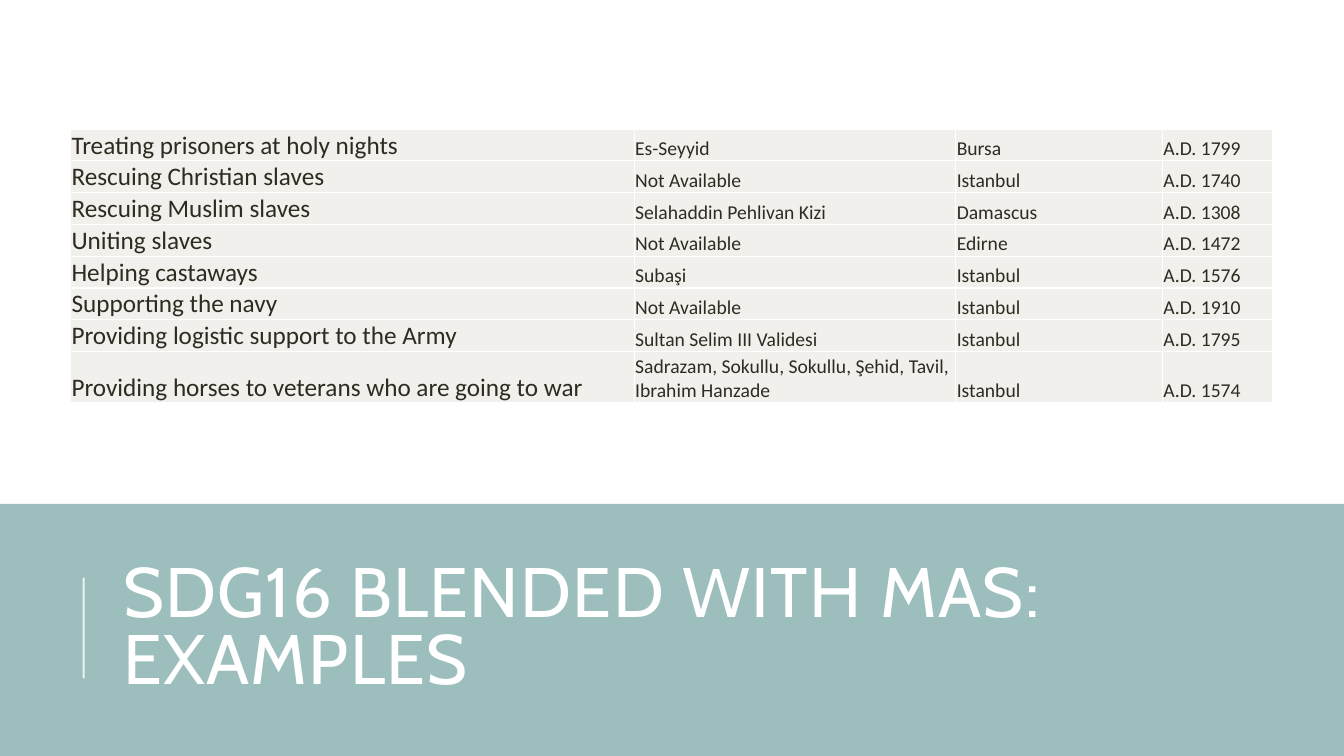
from lxml import etree
from pptx import Presentation
from pptx.dml.color import RGBColor
from pptx.enum.shapes import MSO_CONNECTOR, MSO_SHAPE
from pptx.enum.text import MSO_ANCHOR, MSO_AUTO_SIZE, PP_ALIGN
from pptx.oxml.ns import qn
from pptx.util import Inches, Pt

STRAIGHT = MSO_CONNECTOR.STRAIGHT
RECTANGLE = MSO_SHAPE.RECTANGLE
MIDDLE, BOTTOM = MSO_ANCHOR.MIDDLE, MSO_ANCHOR.BOTTOM
LEFT = PP_ALIGN.LEFT
NO_AUTOFIT = MSO_AUTO_SIZE.NONE
TITLE_ONLY = 5

COLORS = {"band": "9CBEBD", "white": "FFFFFF", "cell": "F1F0EC", "text": "2E2B21"}
TITLE_FONT, TABLE_FONT = "Cabin", "Calibri"

COLUMN_WIDTHS = [5.59, 3.19, 2.05, 1.09]
COLUMN_SIZES = [18, 14, 14, 14]
ROW_HEIGHT, LAST_ROW_HEIGHT = 0.28, 0.51
EXAMPLES = [
    ("Treating prisoners at holy nights", "Es-Seyyid", "Bursa", "A.D. 1799"),
    ("Rescuing Christian slaves", "Not Available", "Istanbul", "A.D. 1740"),
    ("Rescuing Muslim slaves", "Selahaddin Pehlivan Kizi", "Damascus", "A.D. 1308"),
    ("Uniting slaves", "Not Available", "Edirne", "A.D. 1472"),
    ("Helping castaways", "Subaşi", "Istanbul", "A.D. 1576"),
    ("Supporting the navy", "Not Available", "Istanbul", "A.D. 1910"),
    ("Providing logistic support to the Army", "Sultan Selim III Validesi",
     "Istanbul", "A.D. 1795"),
    ("Providing horses to veterans who are going to war",
     "Sadrazam, Sokullu, Sokullu, Şehid, Tavil, Ibrahim Hanzade",
     "Istanbul", "A.D. 1574"),
]


def color(name):
    return RGBColor.from_string(COLORS[name])


def style_font(font, name, size, color_name):
    font.name = name
    font.size = Pt(size)
    font.bold = False
    font.color.rgb = color(color_name)


def add_band(slide):
    """Add the coloured band behind the title."""
    band = slide.shapes.add_shape(
        RECTANGLE, Inches(0), Inches(5), Inches(13.33), Inches(2.5))
    band.shadow.inherit = False
    band.fill.solid()
    band.fill.fore_color.rgb = color("band")
    band.line.fill.background()
    slide.shapes.title._element.addprevious(band._element)


def set_title(slide, text):
    title = slide.shapes.title
    title.left, title.top = Inches(1.12), Inches(5.44)
    title.width, title.height = Inches(10.63), Inches(1.64)
    frame = title.text_frame
    frame.text = text
    frame.word_wrap = True
    frame.auto_size = NO_AUTOFIT
    frame.vertical_anchor = MIDDLE
    paragraph = frame.paragraphs[0]
    paragraph.alignment = LEFT
    paragraph.line_spacing = 0.8
    style_font(paragraph.font, TITLE_FONT, 50, "white")
    paragraph.runs[0].font._element.set("spc", "100")


def add_title_rule(slide):
    """Add the slightly transparent upright line left of the title."""
    rule = slide.shapes.add_connector(
        STRAIGHT, Inches(0.83), Inches(6.73), Inches(0.83), Inches(5.73))
    rule.line.width = Pt(1.5)
    rule.line.color.rgb = color("white")
    properties = rule._element.spPr
    etree.SubElement(properties.find(".//" + qn("a:srgbClr")), qn("a:alpha"), val="80000")
    etree.SubElement(properties, qn("a:effectLst"))


def set_borders(cell):
    properties = cell._tc.get_or_add_tcPr()
    for index, side in enumerate(("a:lnL", "a:lnR", "a:lnT", "a:lnB")):
        border = etree.Element(qn(side), w=str(Pt(1)))
        fill = etree.SubElement(border, qn("a:solidFill"))
        etree.SubElement(fill, qn("a:srgbClr"), val=COLORS["white"])
        properties.insert(index, border)


def fill_cell(cell, text, size):
    cell.text = text
    cell.vertical_anchor = BOTTOM
    cell.margin_left = cell.margin_right = cell.margin_top = Inches(0.01)
    cell.margin_bottom = 0
    cell.fill.solid()
    cell.fill.fore_color.rgb = color("cell")
    style_font(cell.text_frame.paragraphs[0].font, TABLE_FONT, size, "text")
    set_borders(cell)


def add_examples_table(slide):
    row_heights = [ROW_HEIGHT] * (len(EXAMPLES) - 1) + [LAST_ROW_HEIGHT]
    table = slide.shapes.add_table(
        len(EXAMPLES), len(COLUMN_WIDTHS), Inches(0.7), Inches(1.28),
        Inches(sum(COLUMN_WIDTHS)), Inches(sum(row_heights))).table
    table.first_row = False
    table.horz_banding = False
    for column, width in zip(table.columns, COLUMN_WIDTHS):
        column.width = Inches(width)
    for row, height, example in zip(table.rows, row_heights, EXAMPLES):
        row.height = Inches(height)
        for cell, text, size in zip(row.cells, example, COLUMN_SIZES):
            fill_cell(cell, text, size)


def main():
    presentation = Presentation()
    presentation.slide_width = Inches(13.33)
    presentation.slide_height = Inches(7.5)
    slide = presentation.slides.add_slide(presentation.slide_layouts[TITLE_ONLY])
    add_band(slide)
    set_title(slide, "SDG16 BLENDED WITH MAS: EXAMPLES")
    add_title_rule(slide)
    add_examples_table(slide)
    presentation.save("out.pptx")


if __name__ == "__main__":
    main()
